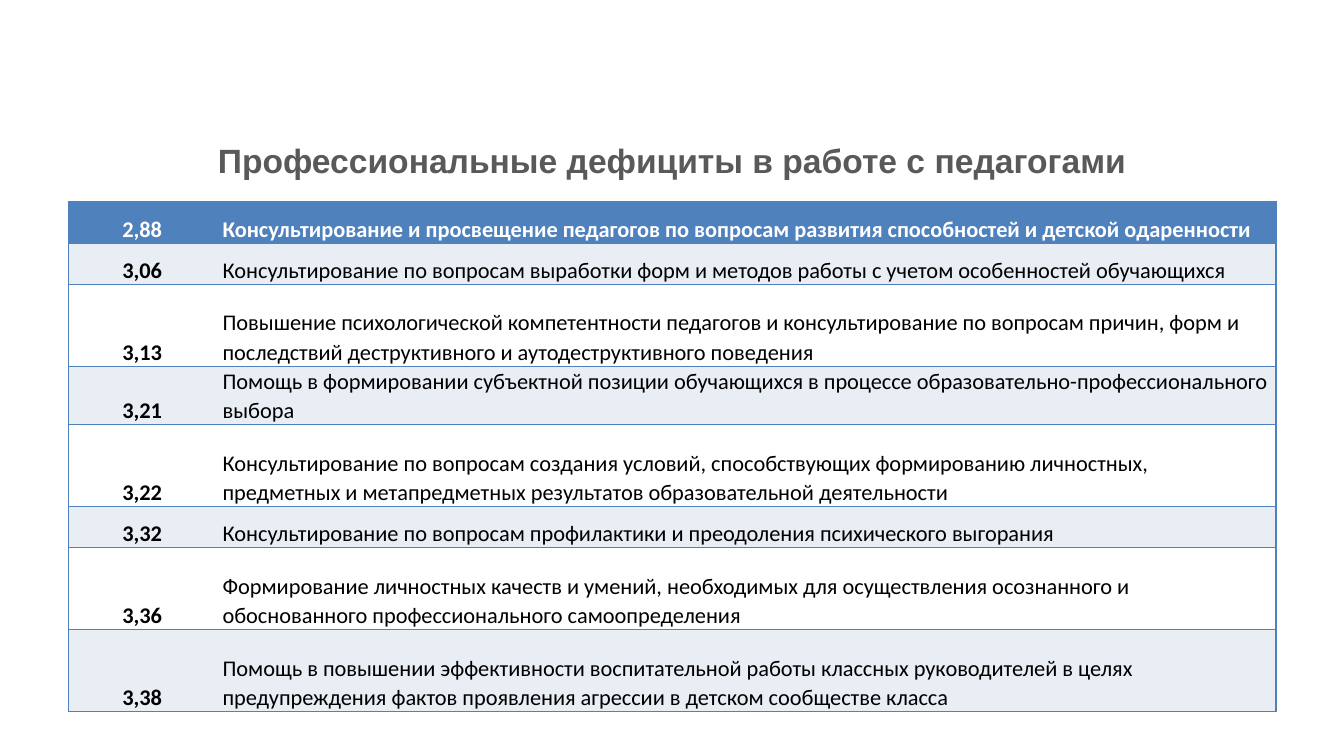
from lxml import etree
from pptx import Presentation
from pptx.dml.color import RGBColor
from pptx.enum.text import MSO_ANCHOR, PP_ALIGN
from pptx.oxml.ns import qn
from pptx.util import Pt

CENTER, LEFT = PP_ALIGN.CENTER, PP_ALIGN.LEFT
MIDDLE, BOTTOM = MSO_ANCHOR.MIDDLE, MSO_ANCHOR.BOTTOM
BLUE, PALE, WHITE, BLACK, GRAY = "4F81BD", "E9EDF4", "FFFFFF", "000000", "595959"
SHORT, MEDIUM, TALL = 29.4, 40.5, 58.5


def rgb(value):
    return RGBColor.from_string(value)


def add_text(tf, text, font="Calibri", size=16, color=BLACK, bold=False,
             align=LEFT, spacing=1.0):
    p = tf.paragraphs[0]
    p.alignment = align
    p.line_spacing = spacing
    r = p.add_run()
    r.text = text
    r.font.name = font
    r.font.size = Pt(size)
    r.font.bold = bold
    r.font.color.rgb = rgb(color)


deficits = [
    ("2,88", "Консультирование и просвещение педагогов по вопросам развития способностей и детской одаренности", SHORT),
    ("3,06", "Консультирование по вопросам выработки форм и методов работы с учетом особенностей обучающихся", SHORT),
    ("3,13", "Повышение психологической компетентности педагогов и консультирование по вопросам причин, форм и последствий деструктивного и аутодеструктивного поведения", TALL),
    ("3,21", "Помощь в формировании субъектной позиции обучающихся в процессе образовательно-профессионального выбора", MEDIUM),
    ("3,22", "Консультирование по вопросам создания условий, способствующих формированию личностных, предметных и метапредметных результатов образовательной деятельности", TALL),
    ("3,32", "Консультирование по вопросам профилактики и преодоления психического выгорания", SHORT),
    ("3,36", "Формирование личностных качеств и умений, необходимых для осуществления осознанного и обоснованного профессионального самоопределения", TALL),
    ("3,38", "Помощь в повышении эффективности воспитательной работы классных руководителей в целях предупреждения фактов проявления агрессии в детском сообществе класса", TALL),
]

prs = Presentation()
prs.slide_width, prs.slide_height = Pt(960), Pt(540)
s = prs.slides.add_slide(prs.slide_layouts[5])

title = s.shapes.title
title.left, title.top, title.width, title.height = Pt(49), Pt(83), Pt(862), Pt(63)
title.text_frame.vertical_anchor = MIDDLE
add_text(title.text_frame, "Профессиональные дефициты в работе с педагогами",
         font="Arial", size=24, color=GRAY, bold=True, align=CENTER)

table = s.shapes.add_table(len(deficits), 2, Pt(49), Pt(144.3), Pt(862.5), Pt(363)).table
table.columns[0].width = Pt(105)
table.columns[1].width = Pt(757.5)

for i, (score, deficit, height) in enumerate(deficits):
    table.rows[i].height = Pt(height)
    header = i == 0
    fill = BLUE if header else (PALE if i % 2 else WHITE)
    for j, text in enumerate((score, deficit)):
        cell = table.cell(i, j)
        cell.margin_left = cell.margin_right = Pt(5)
        cell.margin_top = cell.margin_bottom = 0
        cell.vertical_anchor = BOTTOM
        add_text(cell.text_frame, text, color=WHITE if header else BLACK,
                 bold=header or j == 0, align=LEFT if j else CENTER, spacing=1.07)
        tcPr = cell._tc.get_or_add_tcPr()
        inner = "a:lnL" if j else "a:lnR"
        for side in ("a:lnL", "a:lnR", "a:lnT", "a:lnB"):
            ln = etree.SubElement(tcPr, qn(side), w=str(Pt(1)))
            if side == inner:
                etree.SubElement(ln, qn("a:noFill"))
            else:
                solid = etree.SubElement(ln, qn("a:solidFill"))
                etree.SubElement(solid, qn("a:srgbClr"), val=BLUE)
        cell.fill.solid()
        cell.fill.fore_color.rgb = rgb(fill)

prs.save("out.pptx")
